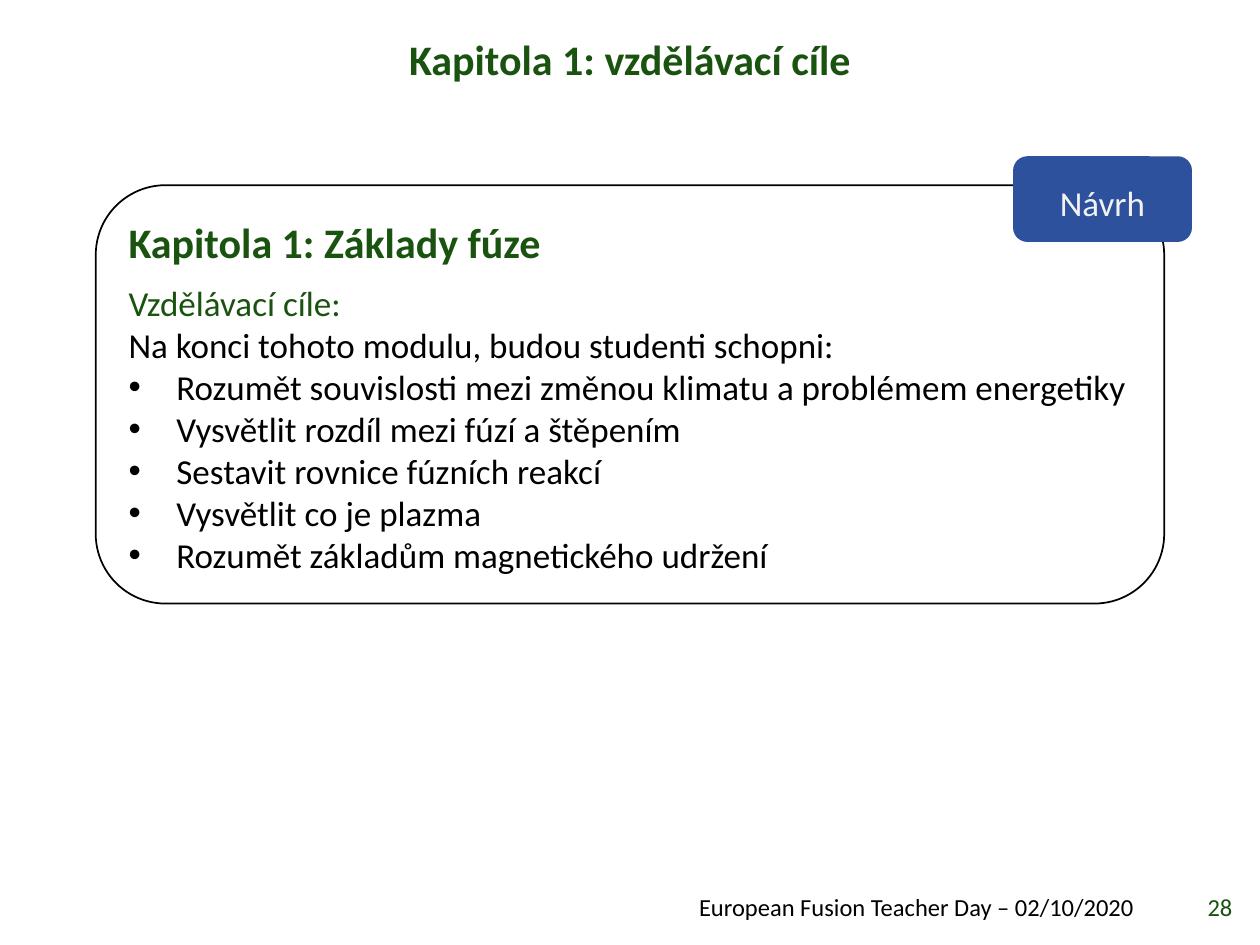
from dataclasses import dataclass

from lxml.etree import SubElement
from pptx import Presentation
from pptx.dml.color import RGBColor
from pptx.enum.shapes import MSO_SHAPE
from pptx.enum.text import MSO_ANCHOR, PP_ALIGN
from pptx.oxml.ns import qn
from pptx.util import Emu, Inches, Pt


@dataclass(frozen=True)
class Theme:
    font: str = "Calibri"
    green: str = "1A520F"
    blue: str = "2D519C"
    black: str = "000000"
    white: str = "FFFFFF"
    pale: str = "F2F2F2"
    head: int = 24
    body: int = 20
    foot: int = 14


theme = Theme()
deck = Presentation()
deck.slide_width, deck.slide_height = Inches(10), Inches(7.5)
slide = deck.slides.add_slide(deck.slide_layouts[6])


def place(left, top, width, height, fill=None, line=None):
    """Add a text box, or a rounded box when a fill is given."""
    at = [Inches(n) for n in (left, top, width, height)]
    if fill is None:
        shape = slide.shapes.add_textbox(*at)
    else:
        shape = slide.shapes.add_shape(MSO_SHAPE.ROUNDED_RECTANGLE, *at)
        shape.shadow.inherit = False
        shape.fill.solid()
        shape.fill.fore_color.rgb = RGBColor.from_string(fill)
        if line:
            shape.line.color.rgb = RGBColor.from_string(line)
            shape.line.width = Pt(1)
        else:
            shape.line.fill.background()
    shape.text_frame.word_wrap = True
    shape.text_frame.vertical_anchor = MSO_ANCHOR.MIDDLE
    return shape.text_frame


def write(para, text, size, color, align=PP_ALIGN.LEFT, bold=False):
    para.text = text
    para.alignment = align
    para.font.name = theme.font
    para.font.size = Pt(size)
    para.font.bold = bold
    para.font.color.rgb = RGBColor.from_string(color)


# Title and footer
title = place(0, 0.26, 10, 0.47).paragraphs[0]
write(title, "Kapitola 1: vzdělávací cíle", theme.head, theme.green,
      PP_ALIGN.CENTER, True)
title.line_spacing = 0.9

for left, width, text, color in (
    (1.46, 7.64, "European Fusion Teacher Day – 02/10/2020", theme.black),
    (9.22, 0.66, "28", theme.green),
):
    foot = place(left, 7.03, width, 0.34)
    write(foot.paragraphs[0], text, theme.foot, color, PP_ALIGN.RIGHT)

# Chapter card
card = place(0.76, 1.47, 8.48, 3.32, theme.white, theme.black)
head = card.paragraphs[0]
write(head, "Kapitola 1: Základy fúze", theme.head, theme.green, bold=True)
head.line_spacing = 1.07
head.space_after = Pt(8)

for text, color in (
    ("Vzdělávací cíle:", theme.green),
    ("Na konci tohoto modulu, budou studenti schopni:", theme.black),
):
    write(card.add_paragraph(), text, theme.body, color)

indent = Emu(Inches(0.38))
for goal in (
    "Rozumět souvislosti mezi změnou klimatu a problémem energetiky",
    "Vysvětlit rozdíl mezi fúzí a štěpením",
    "Sestavit rovnice fúzních reakcí",
    "Vysvětlit co je plazma",
    "Rozumět základům magnetického udržení",
):
    para = card.add_paragraph()
    props = para._p.get_or_add_pPr()
    props.set("marL", str(indent))
    props.set("indent", str(-indent))
    SubElement(props, qn("a:buFont")).set("typeface", "Arial")
    SubElement(props, qn("a:buChar")).set("char", "•")
    tabs = SubElement(props, qn("a:tabLst"))
    SubElement(tabs, qn("a:tab"), pos=str(Inches(0.5)), algn="l")
    write(para, goal, theme.body, theme.black)
para.space_after = Pt(8)

# Badge on the card's corner, with its label
place(8.04, 1.24, 1.42, 0.68, theme.blue)
label = place(8.04, 1.37, 1.42, 0.48, theme.blue)
write(label.paragraphs[0], "Návrh", theme.body, theme.pale, PP_ALIGN.CENTER)

deck.save("out.pptx")
